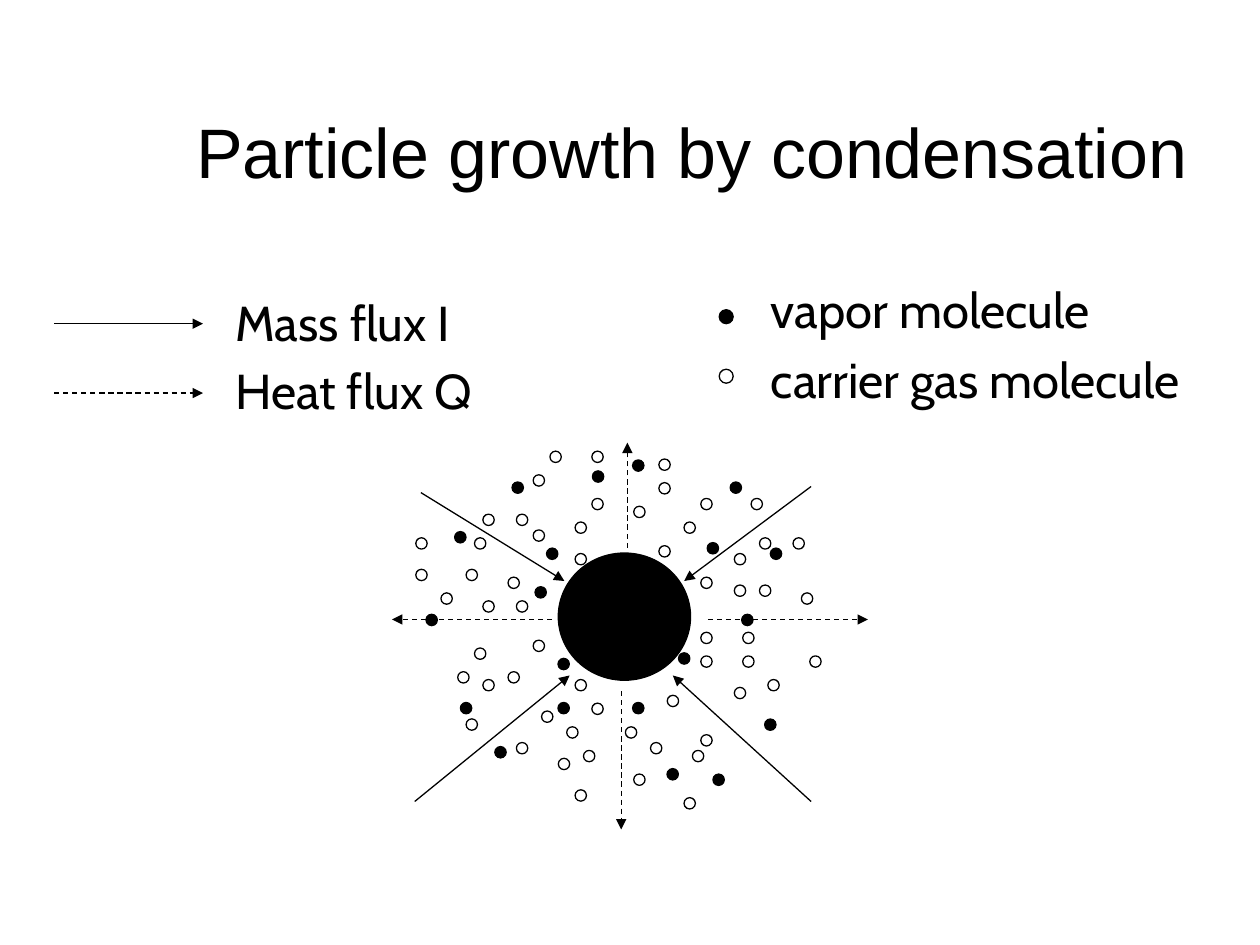
from lxml.etree import SubElement
from pptx import Presentation
from pptx.dml.color import RGBColor
from pptx.enum.dml import MSO_LINE
from pptx.enum.shapes import MSO_CONNECTOR, MSO_SHAPE
from pptx.enum.text import MSO_ANCHOR, MSO_AUTO_SIZE, PP_ALIGN
from pptx.oxml.ns import qn
from pptx.util import Pt

COLORS = {"ink": "000000"}
INK = RGBColor.from_string(COLORS["ink"])
LINE_WIDTH = Pt(0.75)


def add_circle(shapes, left, top, width, height, filled):
    circle = shapes.add_shape(MSO_SHAPE.OVAL, Pt(left), Pt(top), Pt(width), Pt(height))
    circle.shadow.inherit = False
    if filled:
        circle.fill.solid()
        circle.fill.fore_color.rgb = INK
    else:
        circle.fill.background()
    circle.line.color.rgb = INK
    circle.line.width = LINE_WIDTH


def add_flux(shapes, start, end, dashed):
    """Draw an arrow: solid for mass flux, dashed for heat flux."""
    arrow = shapes.add_connector(MSO_CONNECTOR.STRAIGHT, *map(Pt, start + end))
    arrow.line.color.rgb = INK
    arrow.line.width = LINE_WIDTH
    if dashed:
        arrow.line.dash_style = MSO_LINE.DASH
    SubElement(arrow.line._get_or_add_ln(), qn("a:tailEnd"), type="triangle")
    SubElement(arrow._element.spPr, qn("a:effectLst"))


prs = Presentation()
prs.slide_width, prs.slide_height = Pt(720), Pt(540)
slide = prs.slides.add_slide(prs.slide_layouts[6])

# Title, centred in the part of its box right of the indent
title = slide.shapes.add_textbox(Pt(-70.5), Pt(37.5), Pt(790.5), Pt(96.5)).text_frame
title.word_wrap = True
title.vertical_anchor = MSO_ANCHOR.MIDDLE
heading = title.paragraphs[0]
heading.alignment = PP_ALIGN.CENTER
heading._p.get_or_add_pPr().set("marL", str(Pt(141)))
run = heading.add_run()
run.text = "Particle growth by condensation"
run.font.name, run.font.size = "Arial", Pt(40)
run.font.color.rgb = INK

# Molecules sit on a grid: row number -> column numbers
VAPOR = {
    0: [36], 2: [29], 4: [15, 53], 13: [5], 15: [49], 16: [21, 60], 23: [19],
    28: [0, 55], 35: [44], 36: [23], 44: [6, 23, 36], 47: [59], 52: [12],
    56: [42], 57: [50],
}
CARRIER_GAS = {
    0: [16, 21], 1: [29], 3: [14], 4: [29], 6: [21, 34, 40], 7: [26], 8: [8, 12],
    9: [19, 32], 10: [14], 11: [0, 7, 41, 45], 12: [29], 13: [19, 38], 15: [0, 6],
    16: [11, 34], 17: [38, 41], 18: [3, 46], 19: [8, 12], 23: [34, 39], 24: [14],
    25: [7], 26: [34, 39, 47], 28: [5, 11], 29: [8, 19, 42], 30: [38], 31: [30],
    32: [21], 33: [15], 34: [6], 35: [18, 25], 36: [34], 37: [12, 28],
    38: [20, 33], 39: [17], 41: [26], 43: [19], 44: [32],
}
# rows, left, top, column step, row step, filled
MOLECULES = [
    (VAPOR, 243.4, 262.8, 3.28, 3.15, True),
    (CARRIER_GAS, 237.6, 257.8, 4.79, 4.5, False),
]
MASS_FLUXES = [
    ((240.5, 281.5), (322.5, 332)),
    ((463.5, 278), (391, 332)),
    ((463.5, 458), (384.5, 386)),
    ((237, 458), (325.5, 386)),
]
HEAT_FLUXES = [
    ((355, 395), (355, 474)),
    ((404.5, 354), (496, 354)),
    ((358.5, 313), (358.5, 253)),
    ((315.5, 354), (224, 354)),
]

diagram = slide.shapes.add_group_shape().shapes
add_circle(diagram, 319, 316, 75.6, 72.7, True)
for fluxes, dashed in [(MASS_FLUXES, False), (HEAT_FLUXES, True)]:
    for start, end in fluxes:
        add_flux(diagram, start, end, dashed)
for rows, left, top, column_step, row_step, filled in MOLECULES:
    for row, columns in rows.items():
        for column in columns:
            add_circle(diagram, left + column * column_step, top + row * row_step,
                       6.5, 6.5, filled)

# Legend
for y, dashed in [(185, False), (224.6, True)]:
    add_flux(slide.shapes, (31, y), (116, y), dashed)
for top, filled in [(177, True), (211, False)]:
    add_circle(slide.shapes, 411, top, 8, 8, filled)

LEGEND = [
    ("Mass flux I", 127.5, 163.5, 148),
    ("Heat flux Q", 127.5, 202.5, 154),
    ("vapor molecule", 433.5, 156, 202),
    ("carrier gas molecule", 433.5, 196, 263.5),
]
for label, left, top, width in LEGEND:
    entry = slide.shapes.add_textbox(Pt(left), Pt(top), Pt(width), Pt(41)).text_frame
    entry.word_wrap = False
    entry.auto_size = MSO_AUTO_SIZE.SHAPE_TO_FIT_TEXT
    run = entry.paragraphs[0].add_run()
    run.text = label
    run.font.name, run.font.size = "Cabin", Pt(28)
    run.font.color.rgb = INK

prs.save("out.pptx")
